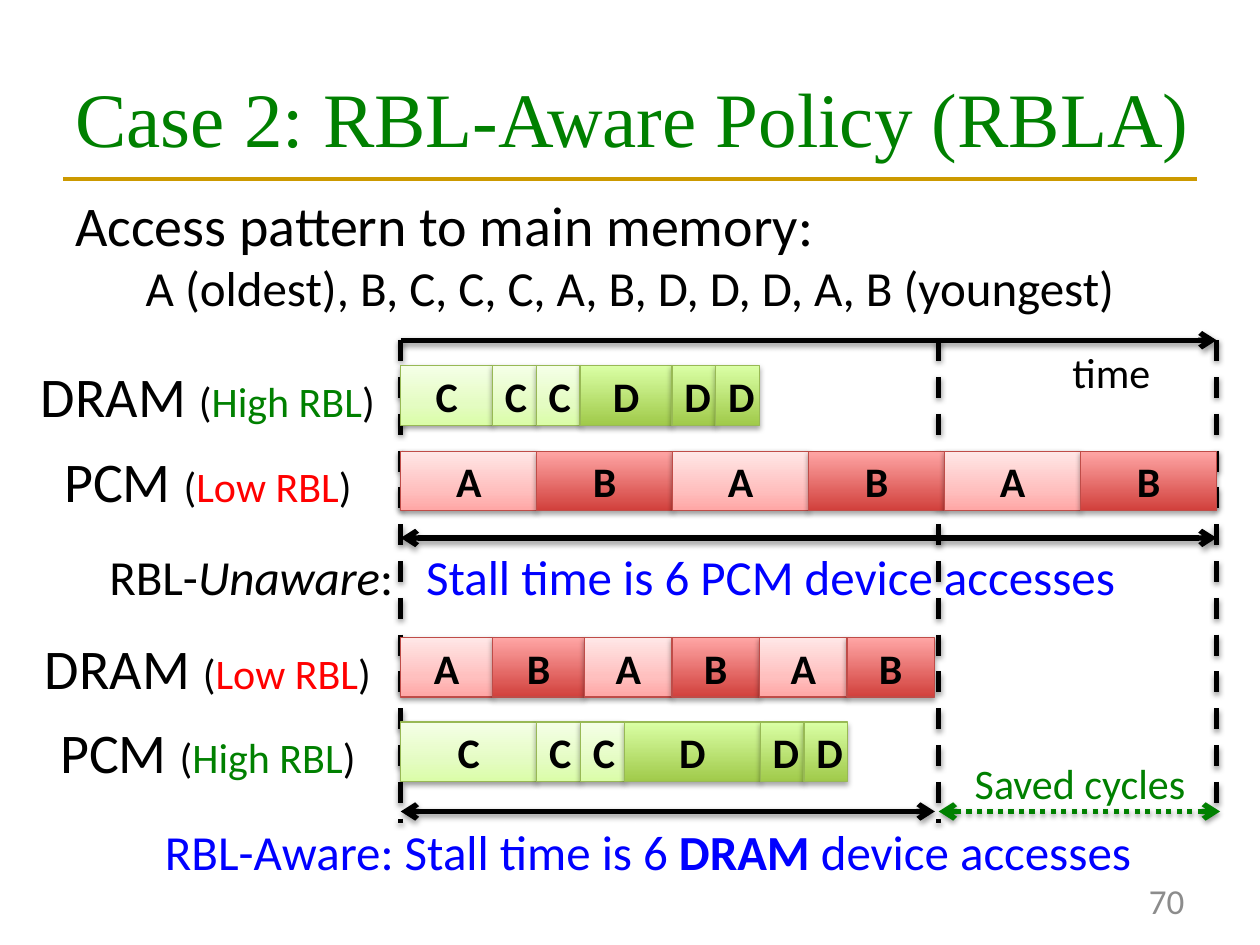
from lxml import etree
from pptx import Presentation
from pptx import util as u
from pptx.dml.color import RGBColor
from pptx.enum import dml, shapes, text
from pptx.oxml import ns

BLACK = RGBColor(0x00, 0x00, 0x00)
GREEN = RGBColor(0x00, 0x80, 0x00)
RED = RGBColor(0xFF, 0x00, 0x00)
BLUE = RGBColor(0x00, 0x00, 0xFF)
GRAY = RGBColor(0x8C, 0x8C, 0x8C)
GOLD = RGBColor(0xCC, 0x99, 0x00)
RED_EDGE = RGBColor(0xBF, 0x4C, 0x48)
GREEN_EDGE = RGBColor(0x98, 0xB9, 0x55)
PALE_RED = [(0, RGBColor(0xFF, 0xA6, 0xA5)), (35, RGBColor(0xFF, 0xC0, 0xBF)), (100, RGBColor(0xFF, 0xE7, 0xE7))]
DEEP_RED = [(0, RGBColor(0xD1, 0x40, 0x3C)), (100, RGBColor(0xFF, 0xA6, 0xA5))]
PALE_GREEN = [(0, RGBColor(0xDA, 0xFD, 0xA7)), (35, RGBColor(0xE4, 0xFC, 0xC2)), (100, RGBColor(0xF5, 0xFF, 0xE7))]
DEEP_GREEN = [(0, RGBColor(0xA0, 0xCA, 0x4A)), (100, RGBColor(0xDA, 0xFF, 0xA5))]
STYLES = {
    "A": (PALE_RED, RED_EDGE, 38, 1.6),
    "B": (DEEP_RED, RED_EDGE, 35, 1.8),
    "C": (PALE_GREEN, GREEN_EDGE, 38, 1.6),
    "D": (DEEP_GREEN, GREEN_EDGE, 35, 1.8),
}
LEFT = 229
LONG, MISS, HIT = 77.7, 52.5, 25
ALIGN = text.PP_ALIGN


def child(parent, tag, **attrs):
    """Append a drawing element with the given attributes."""
    return etree.SubElement(parent, ns.qn(tag), {k: str(v) for k, v in attrs.items()})


def add_run(p, words, size=24, color=BLACK, bold=False, italic=False, font="Calibri"):
    """Add a formatted run to a paragraph."""
    r = p.add_run()
    r.text = words
    r.font.size = u.Pt(size)
    r.font.name = font
    r.font.bold = bold
    r.font.italic = italic
    r.font.color.rgb = color


def add_text(s, box, lines, wrap=True, grow=True):
    """Add a text box from (alignment, runs) lines, each run being (words, format)."""
    sp = s.shapes.add_textbox(*map(u.Pt, box))
    tf = sp.text_frame
    tf.word_wrap = wrap
    tf.auto_size = text.MSO_AUTO_SIZE.SHAPE_TO_FIT_TEXT if grow else text.MSO_AUTO_SIZE.NONE
    tf.vertical_anchor = text.MSO_ANCHOR.TOP if grow else text.MSO_ANCHOR.MIDDLE
    for i, (align, runs) in enumerate(lines):
        p = tf.add_paragraph() if i else tf.paragraphs[0]
        p.alignment = align
        for words, fmt in runs:
            add_run(p, words, **fmt)
    return sp


def add_shadow(effects, alpha=38, dist=1.6):
    """Fill an effect list with a soft downward shadow."""
    shadow = child(effects, "a:outerShdw", blurRad=u.Pt(3.1), dist=u.Pt(dist), dir=5400000, rotWithShape=0)
    child(child(shadow, "a:srgbClr", val=BLACK), "a:alpha", val=alpha * 1000)


def add_line(s, x1, y1, x2, y2, color=BLACK, width=3, dash=None, heads=(), shadow=True):
    """Draw a straight line, with arrowheads at the named ends."""
    c = s.shapes.add_connector(shapes.MSO_CONNECTOR.STRAIGHT, *map(u.Pt, (x1, y1, x2, y2)))
    c.line.color.rgb = color
    c.line.width = u.Pt(width)
    if dash:
        c.line.dash_style = dash
    ln = c.line._get_or_add_ln()
    for end in heads:
        child(ln, f"a:{end}", type="arrow")
    effects = child(c._element.spPr, "a:effectLst")
    if shadow:
        add_shadow(effects)


def add_block(s, box, name):
    """Draw one memory access as a shaded block."""
    stops, edge, alpha, dist = STYLES[name]
    sp = s.shapes.add_shape(shapes.MSO_SHAPE.RECTANGLE, *map(u.Pt, box))
    sp.fill.gradient()
    sp.fill.gradient_angle = 90
    gs_list = sp._element.spPr.find(".//" + ns.qn("a:gsLst"))
    for gs in list(gs_list):
        gs_list.remove(gs)
    for pos, color in stops:
        child(child(gs_list, "a:gs", pos=pos * 1000), "a:srgbClr", val=color)
    sp.line.color.rgb = edge
    sp.line.width = u.Pt(0.75)
    sp.shadow.inherit = False
    add_shadow(sp._element.spPr.find(ns.qn("a:effectLst")), alpha, dist)
    tf = sp.text_frame
    tf.vertical_anchor = text.MSO_ANCHOR.MIDDLE
    p = tf.paragraphs[0]
    p.alignment = ALIGN.CENTER
    add_run(p, name, bold=True)


def add_header(s, box):
    """Place the title, the rule under it and the access pattern."""
    x, y, w, h = box
    title = s.shapes.title
    title.left, title.top, title.width, title.height = map(u.Pt, (x, y, w + 36, h))
    tf = title.text_frame
    tf.auto_size = text.MSO_AUTO_SIZE.NONE
    tf.vertical_anchor = text.MSO_ANCHOR.MIDDLE
    p = tf.paragraphs[0]
    p.alignment = ALIGN.LEFT
    add_run(p, "Case 2: RBL-Aware Policy (RBLA)", size=44, color=GREEN, font="Times New Roman")
    rule = y + 80.6
    add_line(s, x, rule, x + w, rule, color=GOLD, width=2.25, shadow=False)
    add_text(s, (x, rule + 3, w, 82), [
        (ALIGN.LEFT, [("Access pattern to main memory:", dict(size=32))]),
        (ALIGN.CENTER, [("A (oldest), B, C, C, C, A, B, D, D, D, A, B (youngest)", dict(size=28))]),
    ])


def add_timeline(s, box, saved_at):
    """Draw the time axis, its dashed markers and the saved cycles."""
    x, y, w, h = box
    right, bottom = x + w, y + h
    for marker, end in ((right, bottom - 4.5), (x, bottom), (saved_at, bottom)):
        add_line(s, marker, y, marker, end, dash=dml.MSO_LINE.DASH)
    add_line(s, x, y, right, y, heads=["tailEnd"])
    add_text(s, (right - 90, y, 59.8, 36), [(ALIGN.CENTER, [("time", {})])], wrap=False)
    add_text(s, (right - 146.4, bottom - 41, 136.8, 36),
             [(ALIGN.CENTER, [("Saved cycles", dict(color=GREEN))])], wrap=False)
    add_line(s, saved_at, bottom - 6.5, right + 2, bottom - 6.5, color=GREEN,
             dash=dml.MSO_LINE.ROUND_DOT, heads=["headEnd", "tailEnd"])


def add_row(s, box, memory, locality, color, accesses):
    """Place a memory's label and its accesses side by side."""
    x, y, w, h = box
    add_text(s, (x, y - 6, w, 46), [(ALIGN.CENTER, [
        (memory + " ", dict(size=32)), ("(", {}), (locality, dict(color=color)), (")", {})])])
    left = LEFT
    for name, width in accesses:
        add_block(s, (left, y, width, h), name)
        left += width


def add_stall(s, box, span, runs, tab=None):
    """Draw a stall time arrow across the span, with its caption in the box."""
    start, end, y = span
    add_line(s, start, y, end, y, heads=["headEnd", "tailEnd"])
    sp = add_text(s, box, [(ALIGN.LEFT, runs)])
    if tab:
        tabs = child(sp.text_frame.paragraphs[0]._p.get_or_add_pPr(), "a:tabLst")
        child(tabs, "a:tab", pos=u.Pt(tab), algn="l")


def main():
    """Build the slide and save it."""
    prs = Presentation()
    prs.slide_width, prs.slide_height = u.Pt(720), u.Pt(540)
    s = prs.slides.add_slide(prs.slide_layouts[5])
    add_header(s, (36, 21.6, 648, 90))
    right = LEFT + 6 * LONG
    add_timeline(s, (LEFT, 194.4, right - LEFT, 275.8), 536.4)
    rows = [
        (209, "DRAM", "High RBL", GREEN, zip("CCCDDD", [MISS, HIT, HIT] * 2)),
        (257.8, "PCM", "Low RBL", RED, zip("ABABAB", [LONG] * 6)),
        (364.4, "DRAM", "Low RBL", RED, zip("ABABAB", [MISS] * 2 + [50] * 4)),
        (412.6, "PCM", "High RBL", GREEN, zip("CCCDDD", [LONG, HIT, HIT] * 2)),
    ]
    for top, *row in rows:
        add_row(s, (14.4, top, 208.8, 34), *row)
    add_stall(s, (55.4, 308.9, 640, 41), (LEFT, right, 307.4), [
        ("RBL-", dict(size=28)),
        ("Unaware", dict(size=28, italic=True)),
        (":\t", dict(size=28)),
        ("Stall time is 6 PCM device accesses", dict(size=28, color=BLUE)),
    ], tab=181)
    add_stall(s, (87.1, 465.8, 610, 41), (LEFT, 534.2, 463.7), [
        ("RBL-Aware: Stall time is 6 ", dict(size=28, color=BLUE)),
        ("DRAM", dict(size=28, color=BLUE, bold=True)),
        (" device accesses", dict(size=28, color=BLUE)),
    ])
    add_text(s, (516.2, 500.4, 167.8, 28.8),
             [(ALIGN.RIGHT, [("70", dict(size=20, color=GRAY))])], grow=False)
    prs.save("out.pptx")


if __name__ == "__main__":
    main()
